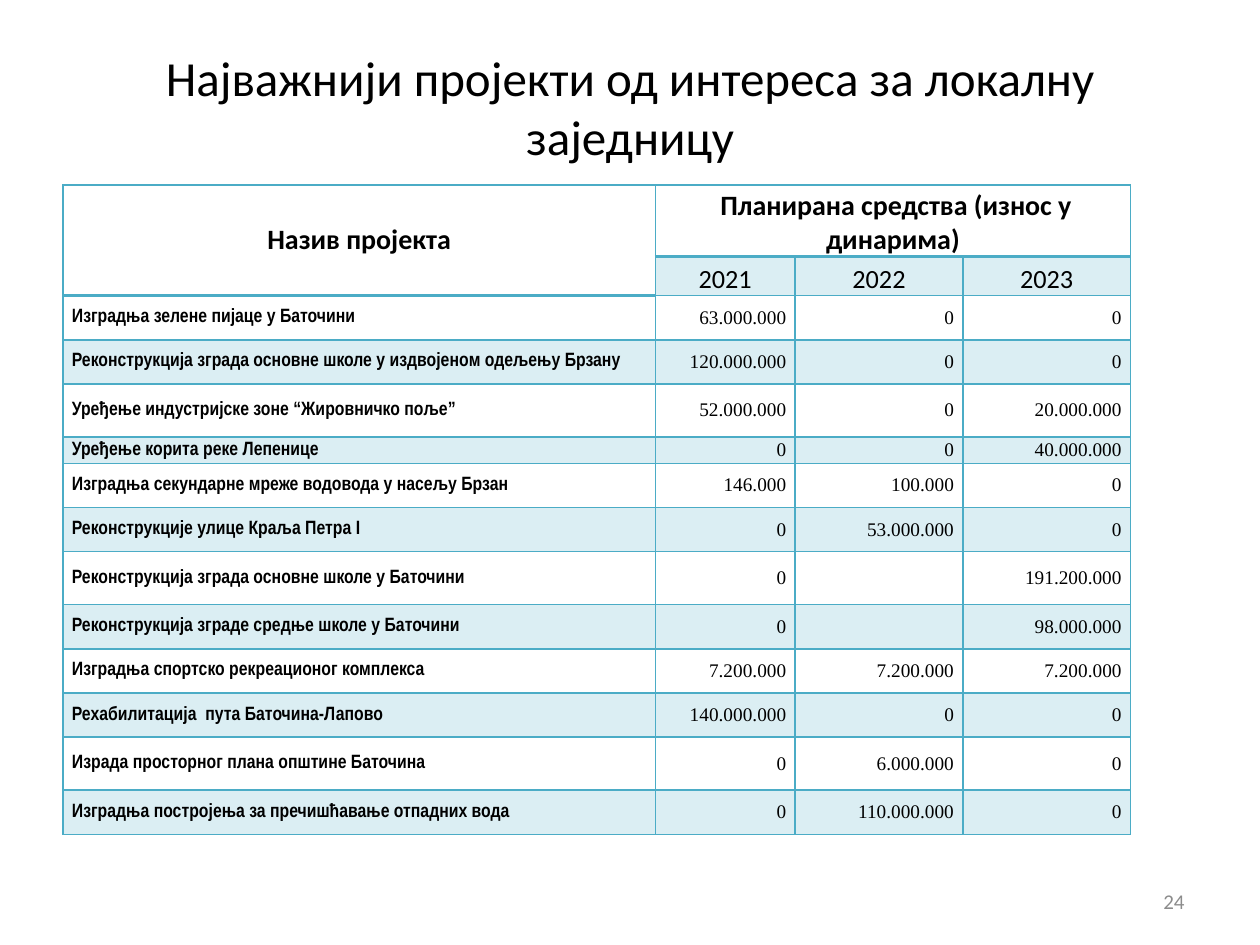
from typing import NamedTuple

from lxml.etree import SubElement
from pptx import Presentation
from pptx.dml.color import RGBColor
from pptx.enum.text import MSO_ANCHOR as Anchor, PP_ALIGN as Align
from pptx.oxml.ns import qn
from pptx.util import Cm, Pt

TEAL = "4BACC6"
BLACK = "000000"


class Style(NamedTuple):
    name: str
    size: float
    bold: bool
    align: Align
    anchor: Anchor = Anchor.MIDDLE
    color: str = BLACK


class Project(NamedTuple):
    name: str
    sums: tuple[str, str, str]
    height: float = 0.89


TITLE = Style("Calibri", 28, False, Align.CENTER)
HEAD = Style("Calibri", 16, True, Align.CENTER)
FUNDS = HEAD._replace(anchor=Anchor.BOTTOM)
YEAR = FUNDS._replace(size=15, bold=False)
NAME = Style("Arial Narrow", 11, True, Align.LEFT)
SUM = Style("Times New Roman", 11, False, Align.RIGHT)
PAGE = Style("Calibri", 12, False, Align.RIGHT, color="8C8C8C")

TALL, SHORT = 1.07, 0.53
YEARS = ("2021", "2022", "2023")
PROJECTS = [
    Project("Изградња зелене пијаце у Баточини", ("63.000.000", "0", "0")),
    Project("Реконструкција зграда основне школе у издвојенoм одељењу Брзану",
            ("120.000.000", "0", "0")),
    Project("Уређење индустријске зоне “Жировничко поље”",
            ("52.000.000", "0", "20.000.000"), TALL),
    Project("Уређење корита реке Лепенице", ("0", "0", "40.000.000"), SHORT),
    Project("Изградња секундарне мреже водовода у насељу Брзан",
            ("146.000", "100.000", "0")),
    Project("Реконструкције улице Краља Петра I", ("0", "53.000.000", "0")),
    Project("Реконструкција зграда основне школе у Баточини",
            ("0", "", "191.200.000"), TALL),
    Project("Реконструкција зграде средње школе у Баточини",
            ("0", "", "98.000.000")),
    Project("Изградња спортско рекреационог комплексa",
            ("7.200.000", "7.200.000", "7.200.000")),
    Project("Рехабилитација  пута Баточина-Лапово", ("140.000.000", "0", "0")),
    Project("Израда просторног плана општине Баточина",
            ("0", "6.000.000", "0"), TALL),
    Project("Изградња постројења за пречишћавање отпадних вода",
            ("0", "110.000.000", "0")),
]
WIDTHS = (11.94, 2.82, 3.38, 3.38)
HEIGHTS = [1.45, 0.78] + [p.height for p in PROJECTS]


def rgb(code: str) -> RGBColor:
    return RGBColor.from_string(code)


def write(frame, text: str, style: Style) -> None:
    """Put one formatted paragraph in a text frame."""
    para = frame.paragraphs[0]
    para.alignment = style.align
    if not text:
        return
    run = para.add_run()
    run.text = text
    for key in ("name", "size", "bold"):
        value = getattr(style, key)
        setattr(run.font, key, Pt(value) if key == "size" else value)
    run.font.color.rgb = rgb(style.color)


def place(shape, left: float, top: float, width: float, height: float) -> None:
    box = {"left": left, "top": top, "width": width, "height": height}
    for key, value in box.items():
        setattr(shape, key, Cm(value))


def label(shape, text: str, style: Style) -> None:
    frame = shape.text_frame
    frame.word_wrap = True
    frame.vertical_anchor = style.anchor
    write(frame, text, style)


def fill(cell, text: str, style: Style) -> None:
    """Write a table cell with its margins."""
    form = {"margin_left": Cm(0.18), "margin_right": Cm(0.18),
            "margin_top": 0, "margin_bottom": 0,
            "vertical_anchor": style.anchor}
    for key, value in form.items():
        setattr(cell, key, value)
    write(cell.text_frame, text, style)


def edge(cell, top: float, bottom: float) -> None:
    """Draw the four borders of a cell; widths are in points."""
    props = cell._tc.get_or_add_tcPr()
    for side, width in (("L", 1), ("R", 1), ("T", top), ("B", bottom)):
        line = SubElement(props, qn(f"a:ln{side}"), w=str(Pt(width)))
        paint = SubElement(line, qn("a:solidFill"))
        SubElement(paint, qn("a:srgbClr"), val=TEAL)


def tint(cell, band: bool) -> None:
    """Shade a banded cell with 20 % teal, or leave it clear."""
    if not band:
        cell.fill.background()
        return
    cell.fill.solid()
    cell.fill.fore_color.rgb = rgb(TEAL)
    color = cell._tc.tcPr.find(qn("a:solidFill"))[0]
    SubElement(color, qn("a:alpha"), val="20000")


def build(slide) -> None:
    """Draw the table of projects."""
    frame = slide.shapes.add_table(len(HEIGHTS), len(WIDTHS), Cm(1.27),
                                   Cm(3.73), Cm(sum(WIDTHS)), Cm(sum(HEIGHTS)))
    table = frame.table
    table.first_row = table.horz_banding = False
    for col, width in zip(table.columns, WIDTHS):
        col.width = Cm(width)
    for row, height in zip(table.rows, HEIGHTS):
        row.height = Cm(height)

    # Merged headings
    table.cell(0, 0).merge(table.cell(1, 0))
    table.cell(0, 1).merge(table.cell(0, 3))
    fill(table.cell(0, 0), "Назив пројекта", HEAD)
    fill(table.cell(0, 1), " Планирана средства (износ у динарима)", FUNDS)
    for c, year in enumerate(YEARS, 1):
        fill(table.cell(1, c), year, YEAR)

    # Project rows
    for r, item in enumerate(PROJECTS, 2):
        fill(table.cell(r, 0), item.name, NAME)
        for c, text in enumerate(item.sums, 1):
            fill(table.cell(r, c), text, SUM)

    # Borders and bands, with a heavier line below the merged headings
    for r in range(len(HEIGHTS)):
        for c in range(len(WIDTHS)):
            cell = table.cell(r, c)
            rule = 2 if c == 0 else 1
            edge(cell, 2 if (r, c > 0) == (1, True) else rule if r == 2 else 1,
                 2 if r == 0 else rule if r == 1 else 1)
            tint(cell, r % 2 == 1 and not cell.is_spanned)


def main() -> None:
    deck = Presentation()
    deck.slide_width, deck.slide_height = Cm(25.4), Cm(19.05)
    slide = deck.slides.add_slide(deck.slide_layouts[5])

    # Title
    title = slide.shapes.title
    place(title, 1.27, 0.76, 22.86, 2.77)
    label(title, "Најважнији пројекти од интереса за локалну заједницу", TITLE)

    build(slide)

    # Page number
    page = slide.shapes.add_textbox(Cm(18.2), Cm(17.66), Cm(5.93), Cm(1.01))
    label(page, "24", PAGE)

    deck.save("out.pptx")


if __name__ == "__main__":
    main()
